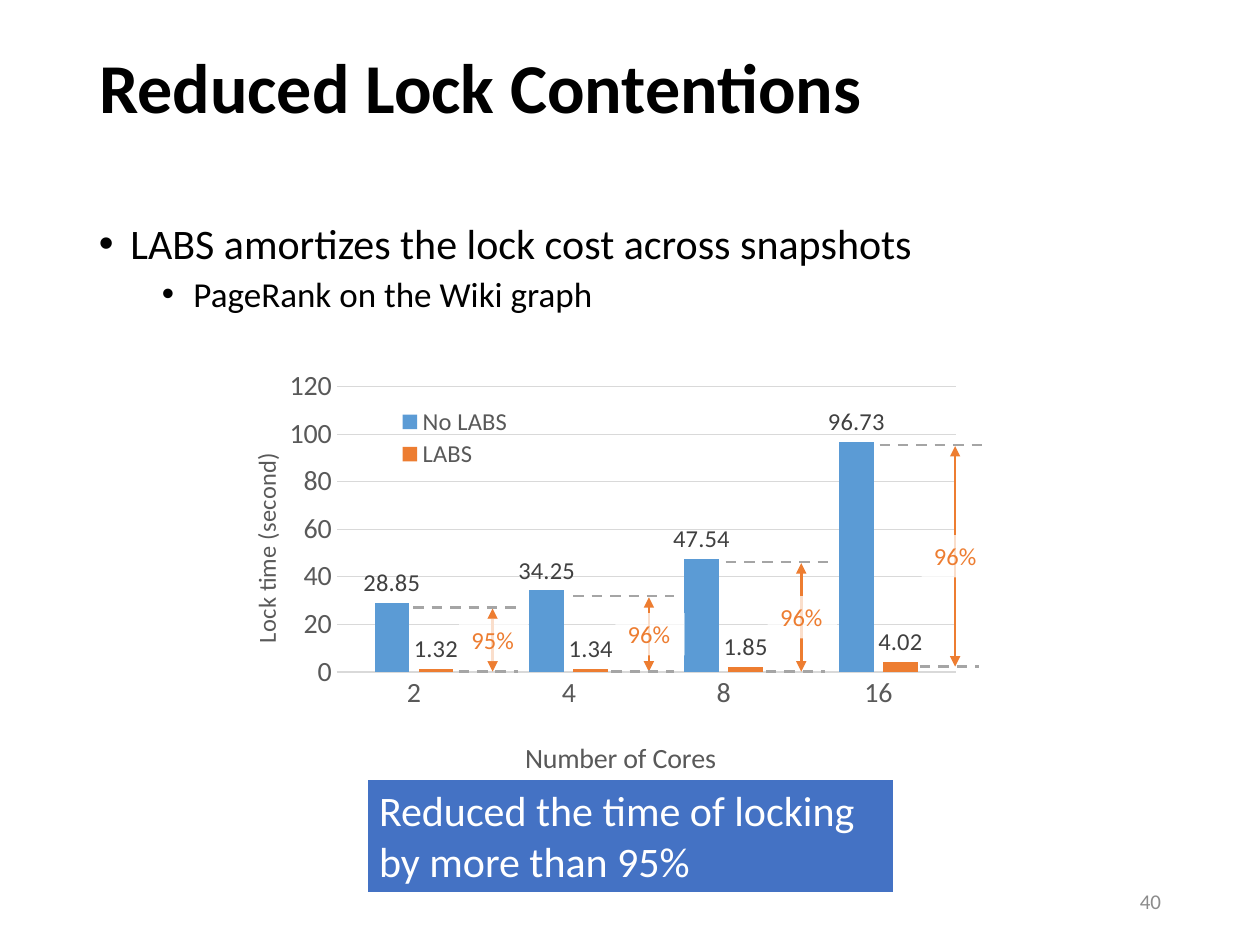
from lxml import etree
from pptx import Presentation
from pptx import util as u
from pptx.chart import data as cd
from pptx.dml import color
from pptx.enum import chart as ch, dml, shapes, text
from pptx.oxml import ns

Pt = u.Pt
FONT = "Calibri"
GREY, ORANGE, WHITE, BLACK = "595959", "ED7D31", "FFFFFF", "000000"


def rgb(value):
    return color.RGBColor.from_string(value)


def child(parent, tag, **attrs):
    return etree.SubElement(parent, ns.qn(tag), **attrs)


def style(font, size, hex_color, bold=False):
    font.name, font.size, font.bold = FONT, Pt(size), bold
    font.color.rgb = rgb(hex_color)


def place(sp, box):
    sp.left, sp.top, sp.width, sp.height = (Pt(v) for v in box)


def add_title(s, box):
    sp = s.shapes.title
    place(sp, box)
    tf = sp.text_frame
    tf.text = "Reduced Lock Contentions"
    tf.vertical_anchor = text.MSO_ANCHOR.MIDDLE
    p = tf.paragraphs[0]
    p.alignment = text.PP_ALIGN.LEFT
    p.line_spacing = 0.9
    style(p.runs[0].font, 40, BLACK, True)


def add_bullets(s, box, items):
    tf = s.shapes.add_textbox(*(Pt(v) for v in box)).text_frame
    tf.word_wrap = True
    for i, (line, level, size, before) in enumerate(items):
        p = tf.add_paragraph() if i else tf.paragraphs[0]
        p.text, p.level = line, level
        p.line_spacing, p.space_before = 0.9, Pt(before)
        style(p.runs[0].font, size, BLACK)
        pPr = p._p.get_or_add_pPr()
        pPr.set("marL", str(Pt(18 + 36 * level)))
        pPr.set("indent", str(Pt(-18)))
        child(pPr, "a:buFont", typeface="Arial")
        child(pPr, "a:buChar", char="•")


def add_slide_number(s, box):
    tf = s.shapes.add_textbox(*(Pt(v) for v in box)).text_frame
    tf.word_wrap = True
    tf.text = "40"
    tf.vertical_anchor = text.MSO_ANCHOR.MIDDLE
    p = tf.paragraphs[0]
    p.alignment = text.PP_ALIGN.RIGHT
    style(p.runs[0].font, 12, "8C8C8C")


def set_layout(el, inner=False, **fractions):
    for old in el.findall(ns.qn("c:layout")):
        el.remove(old)
    layout = etree.Element(ns.qn("c:layout"))
    manual = child(layout, "c:manualLayout")
    if inner:
        child(manual, "c:layoutTarget", val="inner")
    for mode in ("xMode", "yMode"):
        child(manual, "c:" + mode, val="edge")
    for key, value in fractions.items():
        child(manual, "c:" + key, val=str(value))
    overlay = el.find(ns.qn("c:overlay"))
    if overlay is None:
        el.insert(0, layout)
    else:
        overlay.addprevious(layout)


def format_axis(axis, title, title_size, x, y):
    axis.major_tick_mark = axis.minor_tick_mark = ch.XL_TICK_MARK.NONE
    style(axis.tick_labels.font, 16, GREY)
    tf = axis.axis_title.text_frame
    tf.text = title
    style(tf.paragraphs[0].runs[0].font, title_size, GREY)
    set_layout(axis.axis_title._element, x=x, y=y)


def add_lock_chart(s, box):
    data = cd.CategoryChartData()
    data.categories = ["2", "4", "8", "16"]
    data.add_series("No LABS", (28.85, 34.25, 47.54, 96.73))
    data.add_series("LABS", (1.32, 1.34, 1.85, 4.02))
    chart = s.shapes.add_chart(ch.XL_CHART_TYPE.COLUMN_CLUSTERED, *(Pt(v) for v in box), data).chart
    style(chart.font, 10, BLACK)
    chart.has_title = False
    chart.has_legend = True
    chart.legend.position = ch.XL_LEGEND_POSITION.BOTTOM
    chart.legend.include_in_layout = True
    style(chart.legend.font, 14, GREY)
    set_layout(chart.legend._element, x=0.23, y=0.15, w=0.17, h=0.15)

    cat, val = chart.category_axis, chart.value_axis
    format_axis(cat, "Number of Cores", 16, 0.4, 0.89)
    format_axis(val, "Lock time (second)", 14, 0.04, 0.25)
    val.minimum_scale, val.maximum_scale, val.major_unit = 0, 120, 20
    val.format.line.fill.background()
    for line in (cat.format.line, val.major_gridlines.format.line):
        line.color.rgb, line.width = rgb("D9D9D9"), Pt(0.75)

    plot = chart.plots[0]
    plot.gap_width, plot.overlap, plot.vary_by_categories = 219, -27, False
    for series, fill in zip(plot.series, ("5B9BD5", ORANGE)):
        series.format.fill.solid()
        series.format.fill.fore_color.rgb = rgb(fill)
        labels = series.data_labels
        labels.show_value = True
        labels.position = ch.XL_LABEL_POSITION.OUTSIDE_END
        style(labels.font, 14, "404040")
    plot_area = chart._chartSpace.chart.plotArea
    set_layout(plot_area, inner=True, x=0.16, y=0.11, w=0.81, h=0.64)


def add_block(s, box, label, size, font_color, fill):
    sp = s.shapes.add_shape(shapes.MSO_SHAPE.RECTANGLE, *(Pt(v) for v in box))
    sp.shadow.inherit = False
    sp.fill.solid()
    sp.fill.fore_color.rgb = rgb(fill)
    sp.line.fill.background()
    tf = sp.text_frame
    tf.word_wrap = True
    tf.text = label
    tf.vertical_anchor = text.MSO_ANCHOR.TOP
    p = tf.paragraphs[0]
    p.alignment = text.PP_ALIGN.LEFT
    style(p.runs[0].font, size, font_color)
    return sp


def add_callout(s, box):
    sp = add_block(s, box, "Reduced the time of locking by more than 95%", 24, WHITE, "4472C4")
    sp.line.color.rgb, sp.line.width = rgb(WHITE), Pt(1.5)


def add_line(s, x1, y1, x2, y2, hex_color):
    cxn = s.shapes.add_connector(shapes.MSO_CONNECTOR.STRAIGHT, Pt(x1), Pt(y1), Pt(x2), Pt(y2))
    cxn.line.color.rgb, cxn.line.width = rgb(hex_color), Pt(1.5)
    child(cxn._element.spPr, "a:effectLst")
    return cxn


def add_reduction(s, box, label, arrow_dx, low_dx, low_width):
    left, top, width, height = box
    bottom, x = top + height, left + arrow_dx
    arrow = add_line(s, x, top + 0.7, x, bottom, ORANGE)
    for end in ("a:headEnd", "a:tailEnd"):
        child(arrow.line._get_or_add_ln(), end, type="triangle")
    tag_box = (x - 19.2, top + height / 2 - 11.8, 39.6, 24.2)
    tag = add_block(s, tag_box, label, 14, ORANGE, WHITE)
    tag.text_frame.margin_right = 0
    child(tag.fill.fore_color._xFill[0], "a:alpha", val="75000")
    low = left + low_dx
    for x1, x2, y in ((left, left + width, top), (low, low + low_width, bottom)):
        add_line(s, x1, y, x2, y, "A5A5A5").line.dash_style = dml.MSO_LINE.DASH


def main():
    prs = Presentation()
    prs.slide_width, prs.slide_height = Pt(720), Pt(540)
    s = prs.slides.add_slide(prs.slide_layouts[5])
    add_title(s, (49.5, 0, 621, 104.4))
    add_bullets(s, (49.5, 123.8, 621, 342.7), [
        ("LABS amortizes the lock cost across snapshots", 0, 24, 10),
        ("PageRank on the Wiki graph", 1, 20, 5),
    ])
    add_slide_number(s, (508.5, 500.5, 162, 28.8))
    add_lock_chart(s, (122.4, 193, 437, 255.6))
    add_callout(s, (209.5, 445, 301.7, 65.5))
    reductions = [
        ((236.2, 347, 59.8, 36.8), "95%", 45.3, 25.9, 33.8),
        ((327.6, 340.6, 57.6, 43.2), "96%", 43.2, 21.6, 36),
        ((414.7, 321.1, 59.8, 62.7), "96%", 43.2, 23, 33.8),
        ((502.6, 254.2, 59.8, 126.7), "96%", 43.2, 23, 33.8),
    ]
    for reduction in reductions:
        add_reduction(s, *reduction)
    prs.save("out.pptx")


if __name__ == "__main__":
    main()
